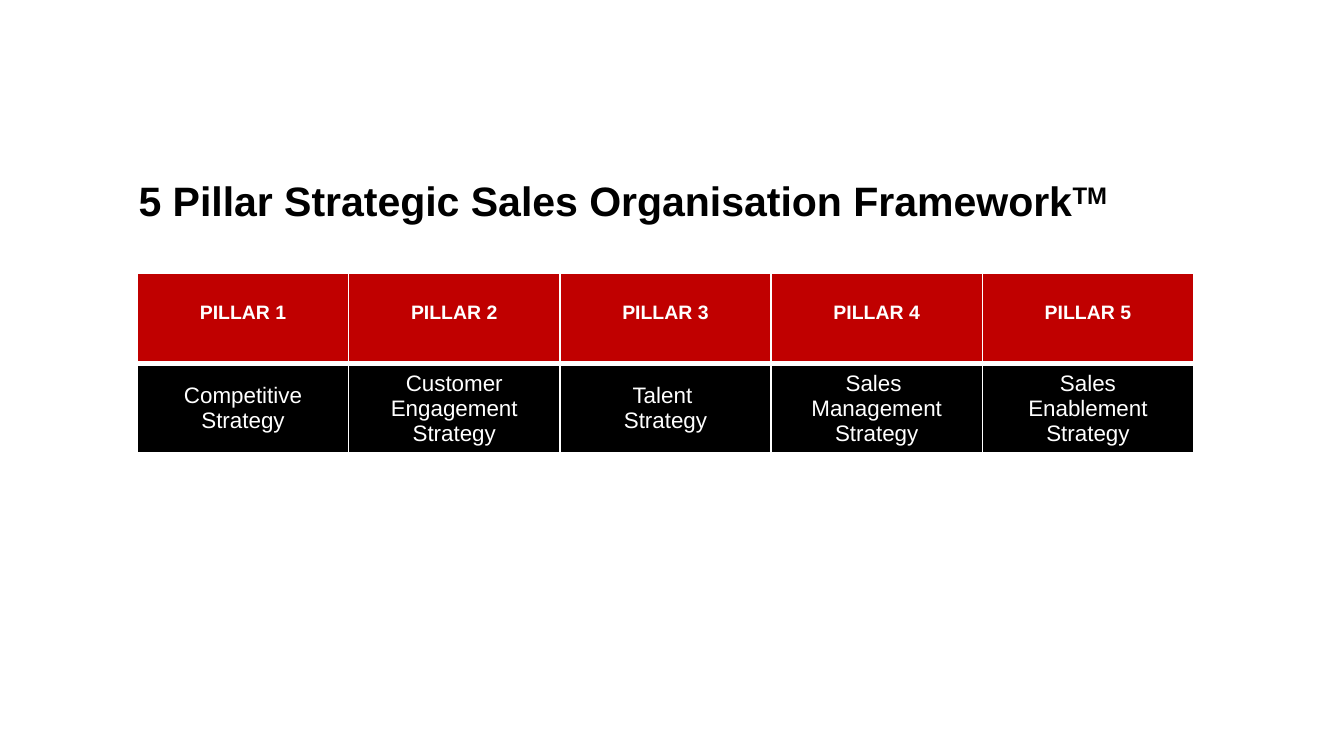
from dataclasses import dataclass
from typing import Any

from lxml import etree
from pptx import Presentation
from pptx.dml.color import RGBColor
from pptx.enum.text import MSO_ANCHOR, PP_ALIGN
from pptx.oxml.ns import qn
from pptx.util import Inches, Pt

MIDDLE = MSO_ANCHOR.MIDDLE
LEFT, CENTER = PP_ALIGN.LEFT, PP_ALIGN.CENTER
BLANK = 6
GRID = 0.1

TITLE = {"size": Pt(22), "bold": True}
HEADER = {"size": Pt(18), "bold": True}
BODY = {"size": Pt(12), "bold": False}

STRATEGIES = [
    ["Competitive Strategy"],
    ["Customer Engagement Strategy"],
    ["Talent ", "Strategy"],
    ["Sales ", "Management Strategy"],
    [" Sales ", "Enablement Strategy"],
]


def color(value):
    return RGBColor.from_string(value)


def grid(units):
    return Inches(units * GRID)


@dataclass
class SlideBuilder:
    """Draws styled elements on the current slide, placed in grid units."""

    slide: Any
    font: str = "Arial"
    ink: str = "000000"
    paper: str = "FFFFFF"
    accent: str = "C00000"

    def span(self, para, text, style, ink, raised=False):
        span = para.add_run()
        span.text = text
        for name, value in {"name": self.font, **style}.items():
            setattr(span.font, name, value)
        span.font.color.rgb = color(ink)
        if raised:
            span.font._element.set("baseline", "30000")

    def title(self, left, top, width, height, text, mark):
        box = self.slide.shapes.add_textbox(*map(grid, (left, top, width, height)))
        frame = box.text_frame
        frame.word_wrap = True
        frame.vertical_anchor = MIDDLE
        para = frame.paragraphs[0]
        para.alignment = LEFT
        self.span(para, text, TITLE, self.ink)
        self.span(para, mark, TITLE, self.ink, raised=True)

    def border(self, cell, side, points):
        properties = cell._tc.get_or_add_tcPr()
        line = etree.SubElement(properties, qn(f"a:ln{side}"), w=str(Pt(points)))
        fill = etree.SubElement(line, qn("a:solidFill"))
        etree.SubElement(fill, qn("a:srgbClr"), val=self.paper)

    def cell(self, cell, lines, style, fill, borders, raised=False):
        for side, points in borders.items():
            self.border(cell, side, points)
        cell.fill.solid()
        cell.fill.fore_color.rgb = color(fill)
        cell.vertical_anchor = MIDDLE
        frame = cell.text_frame
        for index, text in enumerate(lines):
            para = frame.add_paragraph() if index else frame.paragraphs[0]
            para.alignment = CENTER
            self.span(para, text, style, self.paper, raised)

    def pillars(self, left, top, width, row_height, strategies):
        count = len(strategies)
        bounds = map(grid, (left, top, width, 2 * row_height))
        table = self.slide.shapes.add_table(2, count, *bounds).table
        table.first_row = table.horz_banding = False
        thin = {"L": 1, "R": 1, "T": 1, "B": 1}
        for index, lines in enumerate(strategies):
            table.columns[index].width = grid(width / count)
            self.cell(table.cell(0, index), [f"PILLAR {index + 1}"], HEADER,
                      self.accent, {**thin, "B": 3}, raised=True)
            self.cell(table.cell(1, index), lines, BODY,
                      self.ink, {**thin, "T": 3})


def main():
    deck = Presentation()
    deck.slide_width = Inches(10)
    deck.slide_height = deck.slide_width * 9 // 16
    page = SlideBuilder(deck.slides.add_slide(deck.slide_layouts[BLANK]))
    page.pillars(10.23, 20.33, 78.6, 6.7, STRATEGIES)
    page.title(9.33, 10.2, 90, 9.4,
               "5 Pillar Strategic Sales Organisation Framework", "TM")
    deck.save("out.pptx")


if __name__ == "__main__":
    main()
